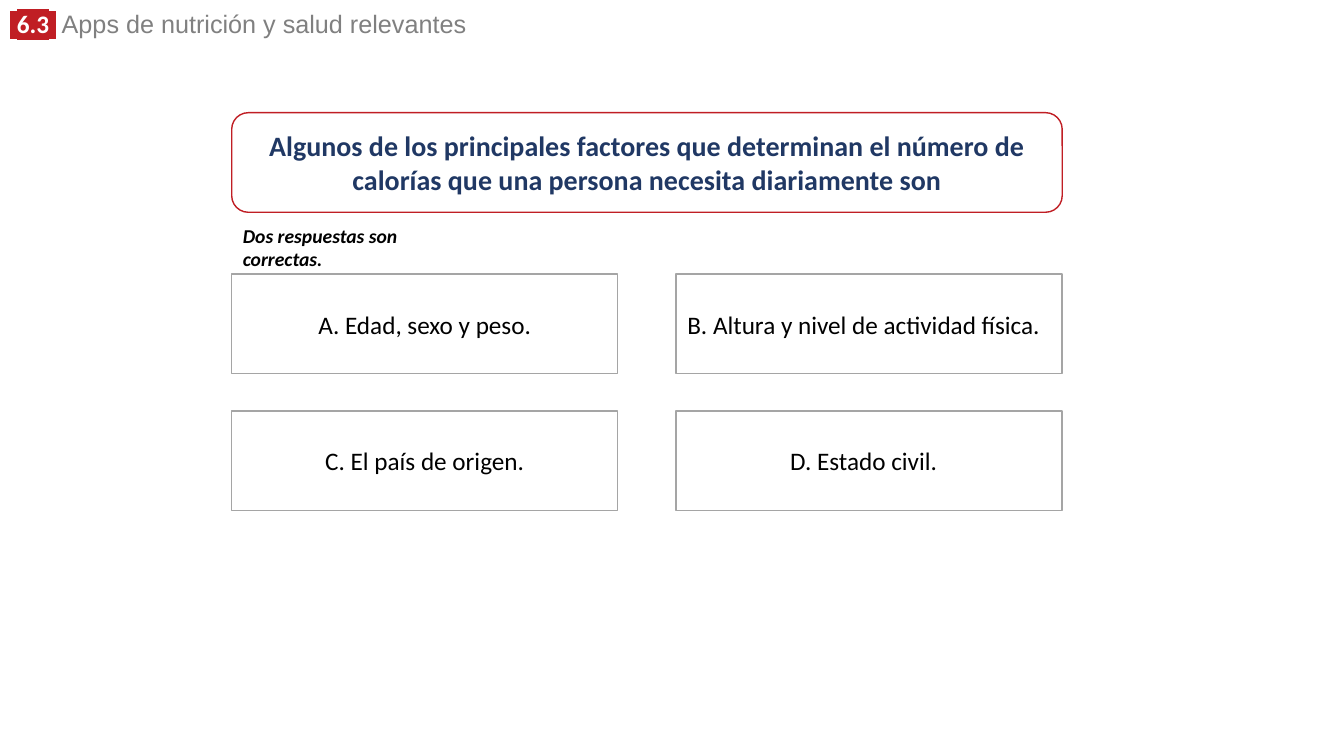
from dataclasses import dataclass

from lxml.etree import SubElement
from pptx import Presentation
from pptx.dml.color import RGBColor
from pptx.enum.shapes import MSO_SHAPE
from pptx.enum.text import MSO_ANCHOR, PP_ALIGN
from pptx.oxml.ns import qn
from pptx.util import Cm, Pt


@dataclass(frozen=True)
class Theme:
    red: str = "C01E24"
    navy: str = "203864"
    grey: str = "808080"
    border: str = "A5A5A5"
    white: str = "FFFFFF"
    black: str = "000000"
    body_font: str = "Calibri"
    heading_font: str = "Arial"
    question_size: int = 20
    body_size: int = 18
    hint_size: int = 14


THEME = Theme()


def add_span(para, text, size=THEME.body_size, color=THEME.black,
             font=THEME.body_font, bold=False, italic=False, highlight=None):
    span = para.add_run()
    span.text = text
    span.font.size = Pt(size)
    span.font.bold = bold
    span.font.italic = italic
    span.font.color.rgb = RGBColor.from_string(color)
    if highlight:
        properties = span.font._element
        mark = SubElement(properties, qn("a:highlight"))
        SubElement(mark, qn("a:srgbClr")).set("val", highlight)
    span.font.name = font


def add_text_box(page, left, top, width, height):
    box = page.shapes.add_textbox(Cm(left), Cm(top), Cm(width), Cm(height))
    box.text_frame.word_wrap = True
    return box.text_frame.paragraphs[0]


def add_panel(page, kind, left, top, width, height, border, text,
              right_inset=0.25, **text_format):
    panel = page.shapes.add_shape(kind, Cm(left), Cm(top), Cm(width), Cm(height))
    panel.shadow.inherit = False
    panel.fill.solid()
    panel.fill.fore_color.rgb = RGBColor.from_string(THEME.white)
    panel.line.color.rgb = RGBColor.from_string(border)
    panel.line.width = Pt(1)
    frame = panel.text_frame
    frame.word_wrap = True
    frame.vertical_anchor = MSO_ANCHOR.MIDDLE
    frame.margin_right = Cm(right_inset)
    para = frame.paragraphs[0]
    para.alignment = PP_ALIGN.CENTER
    add_span(para, text, **text_format)


def add_heading(page, number, title):
    para = add_text_box(page, 0, 0.23, 24.18, 0.89)
    para.line_spacing = 0.8
    for text, font in ((" ", THEME.heading_font), (number, THEME.body_font),
                       (" ", THEME.heading_font)):
        add_span(para, text, font=font, color=THEME.white, bold=True,
                 highlight=THEME.red)
    add_span(para, " " + title, font=THEME.heading_font, color=THEME.grey)


def add_answers(page, answers):
    for index, (text, right_inset) in enumerate(answers):
        row, column = divmod(index, 2)
        add_panel(page, MSO_SHAPE.RECTANGLE, 5.84 + column * 11.2,
                  6.91 + row * 3.45, 9.73, 2.51, THEME.border, text,
                  right_inset=right_inset)


def main():
    deck = Presentation()
    deck.slide_width, deck.slide_height = Cm(33.87), Cm(19.05)
    page = deck.slides.add_slide(deck.slide_layouts[6])
    add_heading(page, "6.3", "Apps de nutrición y salud relevantes")
    add_panel(page, MSO_SHAPE.ROUNDED_RECTANGLE, 5.84, 2.84, 20.93, 2.51,
              THEME.red,
              "Algunos de los principales factores que determinan el número de "
              "calorías que una persona necesita diariamente son",
              size=THEME.question_size, color=THEME.navy, bold=True)
    hint = add_text_box(page, 5.87, 5.51, 5.69, 0.86)
    add_span(hint, "Dos respuestas son correctas.", size=THEME.hint_size,
             bold=True, italic=True)
    add_answers(page, (("A. Edad, sexo y peso.", 0.25),
                       ("B. Altura y nivel de actividad física.", 0.53),
                       ("C. El país de origen.", 0.25),
                       ("D. Estado civil.", 0.53)))
    deck.save("out.pptx")


if __name__ == "__main__":
    main()
